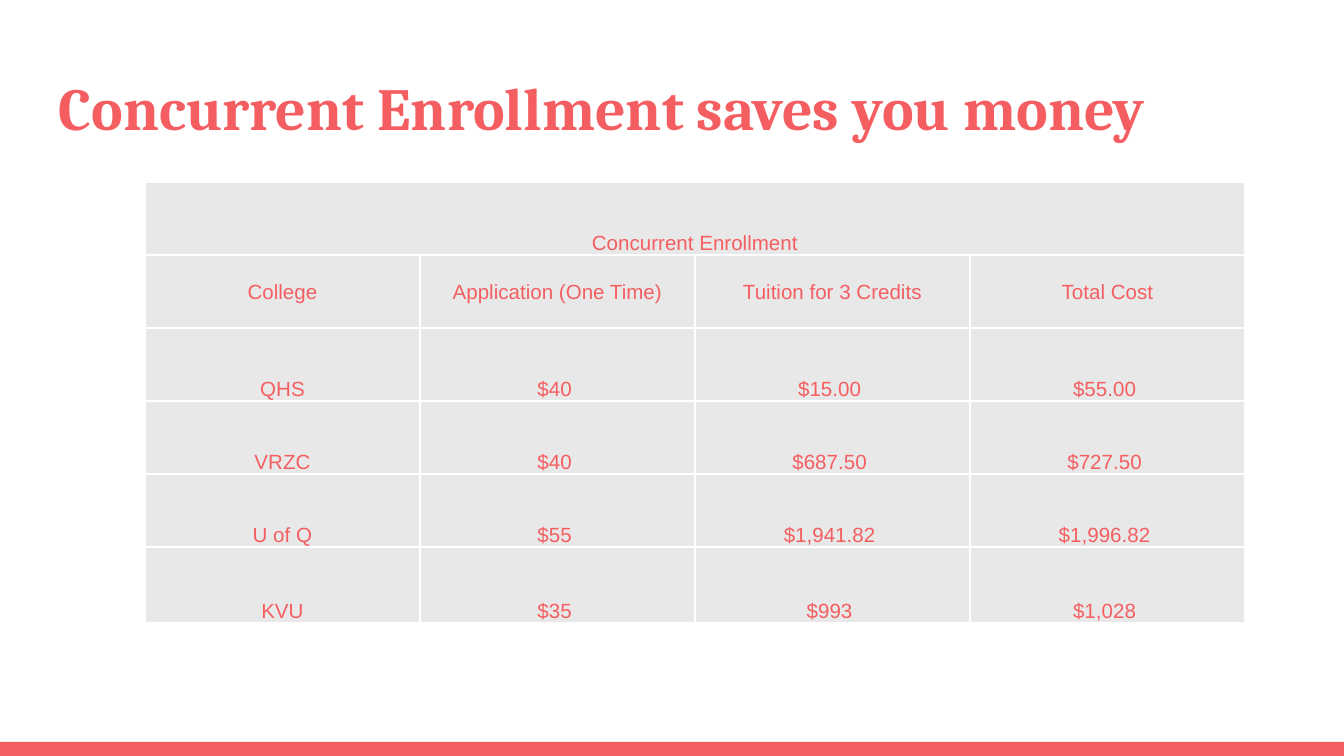
from lxml import etree
from pptx import Presentation
from pptx.dml.color import RGBColor
from pptx.enum.shapes import MSO_SHAPE
from pptx.enum.text import MSO_ANCHOR, MSO_AUTO_SIZE, PP_ALIGN
from pptx.oxml.ns import qn
from pptx.util import Pt

RECT = MSO_SHAPE.RECTANGLE
TOP, MIDDLE, BOTTOM = MSO_ANCHOR.TOP, MSO_ANCHOR.MIDDLE, MSO_ANCHOR.BOTTOM
LEFT, CENTER = PP_ALIGN.LEFT, PP_ALIGN.CENTER
NO_FIT = MSO_AUTO_SIZE.NONE

# Content
TITLE = "Concurrent Enrollment saves you money"
CAPTION = "Concurrent Enrollment"
HEADERS = ["College", "Application (One Time)", "Tuition for 3 Credits", "Total Cost"]
COSTS = [
    ("QHS", "$40 ", "$15.00 ", "$55.00 "),
    ("VRZC", "$40 ", "$687.50 ", "$727.50 "),
    ("U of Q", "$55 ", "$1,941.82 ", "$1,996.82 "),
    ("KVU", "$35 ", "$993 ", "$1,028 "),
]

# Format
COLORS = {"coral": "F55E61", "cell": "E8E8E8", "border": "FFFFFF"}
TITLE_FONT = {"name": "Cambria", "size": Pt(32), "bold": True}
CELL_FONT = {"name": "Arial", "size": Pt(11), "bold": False}

# Layout in px
SLIDE_W, SLIDE_H = 1344, 756
BAR_H = 14
TITLE_BOX = (46, 58, 1252, 91)
TITLE_INSET = 13
TABLE_X, TABLE_Y = 145, 182
COL_W = 275
ROW_H = [73] * 5 + [76]


def px(n):
    return round(n * 914400 / 134.4)


def color(name):
    return RGBColor.from_string(COLORS[name])


def set_attrs(obj, values):
    for name, value in values.items():
        setattr(obj, name, value)


def set_text(tf, text, font, align):
    p = tf.paragraphs[0]
    p.alignment = align
    r = p.add_run()
    r.text = text
    set_attrs(r.font, font)
    r.font.color.rgb = color("coral")


def set_borders(cell):
    tc_pr = cell._tc.get_or_add_tcPr()
    for i, side in enumerate(("lnL", "lnR", "lnT", "lnB")):
        ln = etree.Element(qn(f"a:{side}"), w=str(Pt(1)))
        fill = etree.SubElement(ln, qn("a:solidFill"))
        etree.SubElement(fill, qn("a:srgbClr"), val=COLORS["border"])
        tc_pr.insert(i, ln)


prs = Presentation()
prs.slide_width, prs.slide_height = px(SLIDE_W), px(SLIDE_H)
s = prs.slides.add_slide(prs.slide_layouts[5])

# Bottom bar
bar = s.shapes.add_shape(RECT, 0, px(SLIDE_H - BAR_H), px(SLIDE_W), px(BAR_H))
bar.shadow.inherit = False
bar.fill.solid()
bar.fill.fore_color.rgb = color("coral")
bar.line.fill.background()

# Title
title = s.shapes.title
set_attrs(title, dict(zip(("left", "top", "width", "height"), map(px, TITLE_BOX))))
tf = title.text_frame
set_attrs(tf, {"word_wrap": True, "auto_size": NO_FIT, "vertical_anchor": TOP})
for side in ("left", "top", "right", "bottom"):
    setattr(tf, f"margin_{side}", px(TITLE_INSET))
set_text(tf, TITLE, TITLE_FONT, LEFT)

# Cost table
rows = [[CAPTION], HEADERS, *COSTS]
n_cols = len(HEADERS)
table = s.shapes.add_table(len(rows), n_cols, px(TABLE_X), px(TABLE_Y),
                           px(COL_W * n_cols), px(sum(ROW_H))).table
set_attrs(table, {"first_row": False, "horz_banding": False})
for col in table.columns:
    col.width = px(COL_W)
for row, height in zip(table.rows, ROW_H):
    row.height = px(height)
table.cell(0, 0).merge(table.cell(0, n_cols - 1))

for i, texts in enumerate(rows):
    for j in range(n_cols):
        cell = table.cell(i, j)
        set_attrs(cell, {
            "margin_left": px(1), "margin_right": px(1),
            "margin_top": px(1), "margin_bottom": 0,
            "vertical_anchor": MIDDLE if texts is HEADERS else BOTTOM,
        })
        cell.fill.solid()
        cell.fill.fore_color.rgb = color("cell")
        set_borders(cell)
        if j < len(texts):
            set_text(cell.text_frame, texts[j], CELL_FONT, CENTER)

prs.save("out.pptx")
